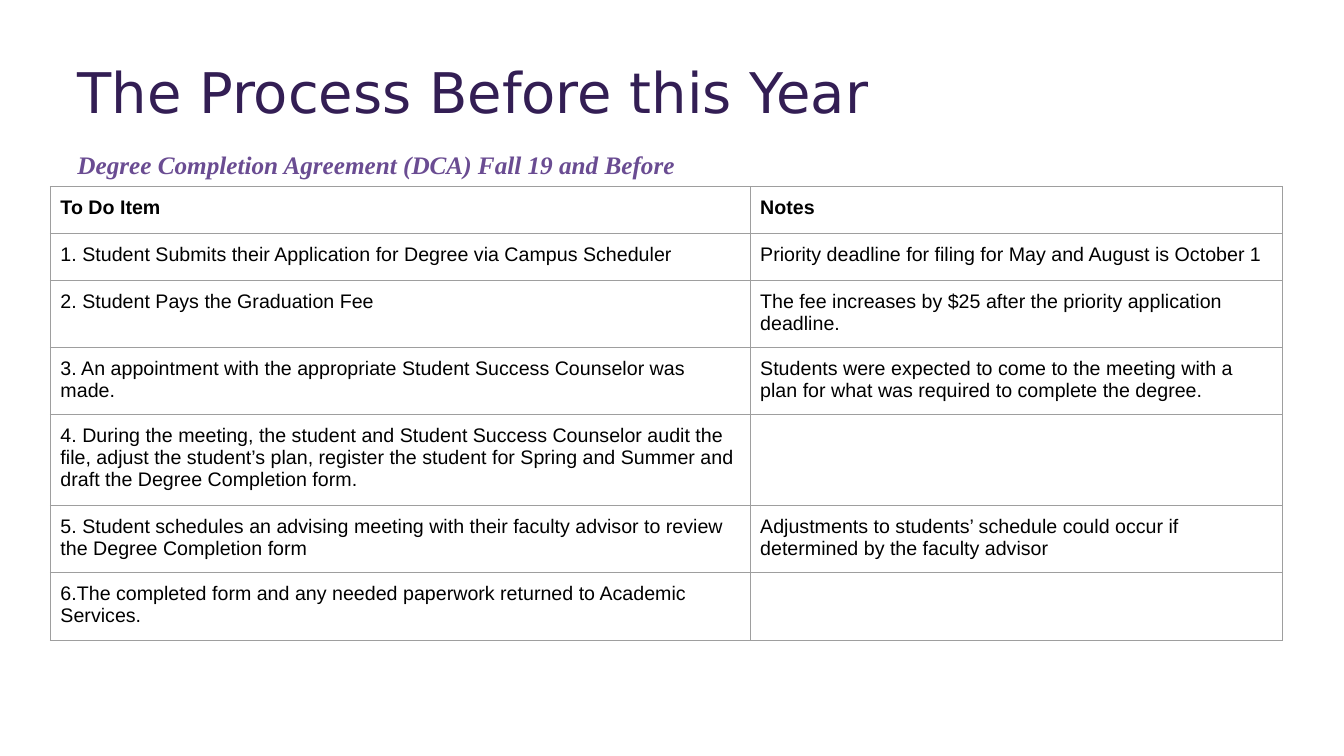
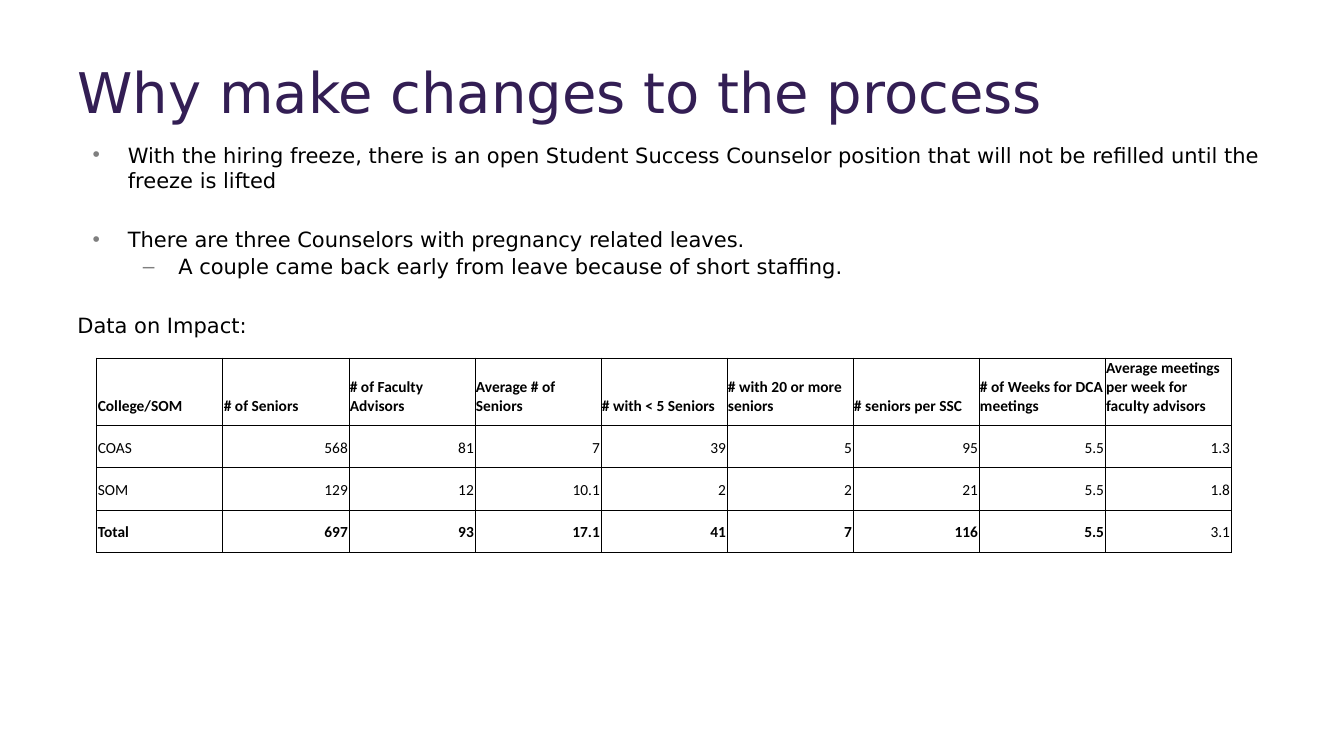
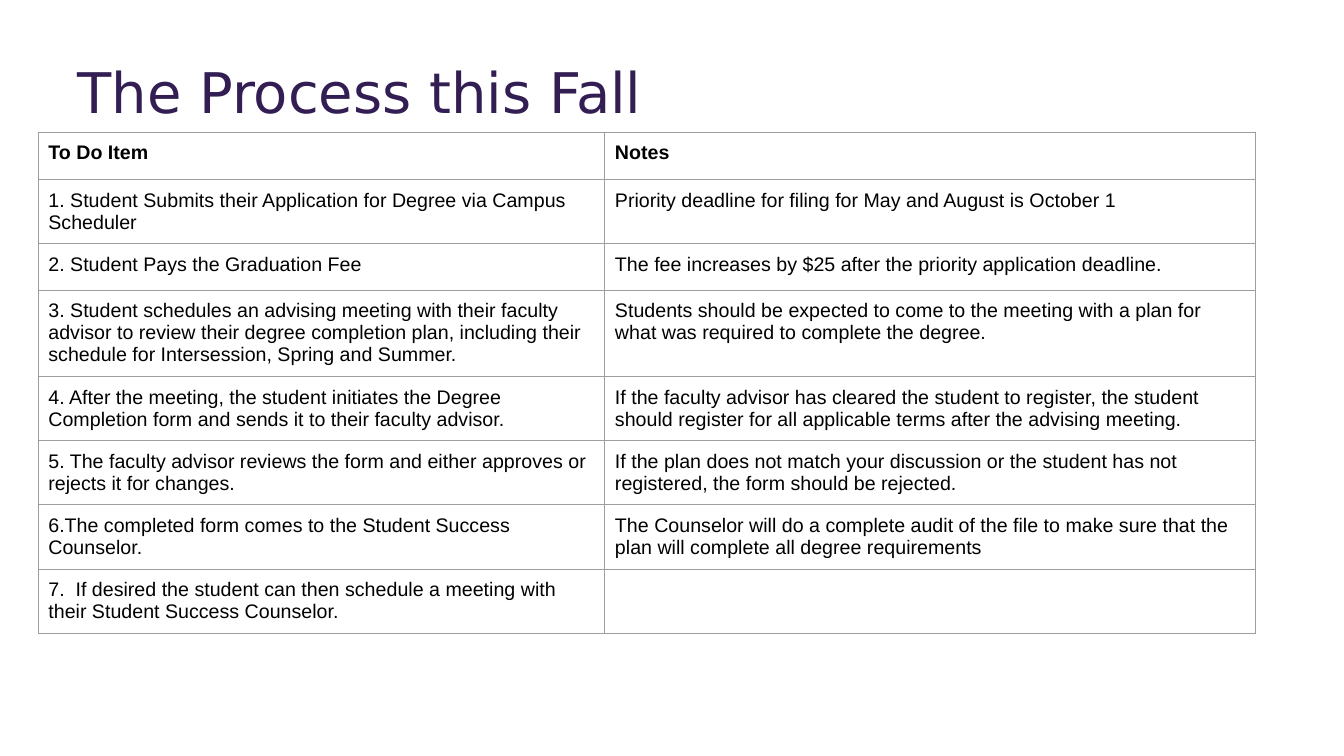
"""Build three slides on the degree completion process."""

from dataclasses import dataclass

import lxml.etree
import pptx
import pptx.dml.color
import pptx.enum.text
import pptx.oxml.ns
import pptx.presentation
import pptx.slide
import pptx.table
import pptx.text.text
import pptx.util


@dataclass(frozen=True)
class TextStyle:
    font: str
    size: float
    color: str
    bold: bool = False
    italic: bool = False


@dataclass(frozen=True)
class Theme:
    background: str = "FFFFFF"
    bullet: str = "7F7F7F"
    title: TextStyle = TextStyle("DejaVu Sans", 40, "331E54")
    subtitle: TextStyle = TextStyle("Times New Roman", 18, "6A4C92", True, True)
    body: TextStyle = TextStyle("DejaVu Sans", 15, "000000")
    step: TextStyle = TextStyle("Arial", 14, "000000")
    step_header: TextStyle = TextStyle("Arial", 14, "000000", True)
    data: TextStyle = TextStyle("Calibri", 11, "000000")
    data_bold: TextStyle = TextStyle("Calibri", 11, "000000", True)


@dataclass(frozen=True)
class CellStyle:
    margins: tuple[float, float, float, float]
    anchor: pptx.enum.text.MSO_ANCHOR
    border_color: str
    border_width: float


@dataclass(frozen=True)
class Box:
    left: float
    top: float
    width: float
    height: float

    def lengths(self) -> tuple[pptx.util.Length, ...]:
        return tuple(pptx.util.Inches(v) for v in (self.left, self.top, self.width, self.height))


@dataclass(frozen=True)
class BodyLine:
    text: str
    bullet: str = ""
    level: int = 0
    space_before: float = 0


THEME = Theme()
ALIGN = pptx.enum.text.PP_ALIGN
ANCHOR = pptx.enum.text.MSO_ANCHOR
STEP_CELL = CellStyle((0.1, 0.1, 0.1, 0.1), ANCHOR.TOP, "9E9E9E", 0.75)
DATA_CELL = CellStyle((0.01, 0.01, 0.01, 0.1), ANCHOR.BOTTOM, "000000", 0.5)
TITLE_BOX = Box(0.67, 0.5, 12, 0.81)
STEP_HEADER_HEIGHT, STEP_ROW_HEIGHT = 0.47, 0.46
DATA_HEADER_HEIGHT, DATA_ROW_HEIGHT = 0.67, 0.42
DATA_COLUMN_WIDTH = 1.25

HEADER = ("To Do Item", "Notes")
APPLY = (
    "1. Student Submits their Application for Degree via Campus Scheduler",
    "Priority deadline for filing for May and August is October 1",
)
PAY = (
    "2. Student Pays the Graduation Fee",
    "The fee increases by $25 after the priority application deadline.",
)
STEPS_BEFORE = [
    HEADER,
    APPLY,
    PAY,
    (
        "3. An appointment with the appropriate Student Success Counselor was made.",
        "Students were expected to come to the meeting with a plan for what was required "
        "to complete the degree.",
    ),
    (
        "4. During the meeting, the student and Student Success Counselor audit the file, "
        "adjust the student’s plan, register the student for Spring and Summer and draft "
        "the Degree Completion form.",
        "",
    ),
    (
        "5. Student schedules an advising meeting with their faculty advisor to review the "
        "Degree Completion form",
        "Adjustments to students’ schedule could occur if determined by the faculty advisor",
    ),
    ("6.The completed form and any needed paperwork returned to Academic Services.", ""),
]
STEPS_THIS_FALL = [
    HEADER,
    APPLY,
    PAY,
    (
        "3. Student schedules an advising meeting with their faculty advisor to review their "
        "degree completion plan, including their schedule for Intersession, Spring and Summer.",
        "Students should be expected to come to the meeting with a plan for what was required "
        "to complete the degree.",
    ),
    (
        "4. After the meeting, the student initiates the Degree Completion form and sends it "
        "to their faculty advisor.",
        "If the faculty advisor has cleared the student to register, the student should "
        "register for all applicable terms after the advising meeting.",
    ),
    (
        "5. The faculty advisor reviews the form and either approves or rejects it for changes.",
        "If the plan does not match your discussion or the student has not registered, the "
        "form should be rejected.",
    ),
    (
        "6.The completed form comes to the Student Success Counselor.",
        "The Counselor will do a complete audit of the file to make sure that the plan will "
        "complete all degree requirements",
    ),
    (
        "7.  If desired the student can then schedule a meeting with their Student Success "
        "Counselor.",
        "",
    ),
]
IMPACT = [
    (
        "College/SOM", "# of Seniors", "# of Faculty Advisors", "Average # of Seniors",
        "# with < 5 Seniors", "# with 20 or more seniors", "# seniors per SSC",
        "# of Weeks for DCA meetings", "Average meetings per week for faculty advisors",
    ),
    ("COAS", "568", "81", "7", "39", "5", "95", "5.5", "1.3"),
    ("SOM", "129", "12", "10.1", "2", "2", "21", "5.5", "1.8"),
    ("Total", "697", "93", "17.1", "41", "7", "116", "5.5", "3.1"),
]
REASONS = [
    BodyLine(
        "With the hiring freeze, there is an open Student Success Counselor position that "
        "will not be refilled until the freeze is lifted",
        "•",
    ),
    BodyLine("There are three Counselors with pregnancy related leaves.", "•", 0, 24.5),
    BodyLine("A couple came back early from leave because of short staffing.", "–", 1, 1),
    BodyLine("Data on Impact:", space_before=24.5),
]


def add_run(p: pptx.text.text._Paragraph, text: str, style: TextStyle) -> None:
    r = p.add_run()
    r.text = text
    r.font.name = style.font
    r.font.size = pptx.util.Pt(style.size)
    r.font.bold = style.bold
    r.font.italic = style.italic
    r.font.color.rgb = pptx.dml.color.RGBColor.from_string(style.color)


def add_element(parent: lxml.etree._Element, tag: str, **attrs: str) -> lxml.etree._Element:
    return lxml.etree.SubElement(parent, pptx.oxml.ns.qn(tag), attrs)


def set_bullet(p: pptx.text.text._Paragraph, line: BodyLine) -> None:
    p.level = line.level
    pPr = p._p.get_or_add_pPr()
    pPr.set("marL", str(pptx.util.Inches(0.5 * (line.level + 1))))
    pPr.set("indent", str(pptx.util.Inches(-0.35)))
    add_element(add_element(pPr, "a:buClr"), "a:srgbClr", val=THEME.bullet)
    add_element(pPr, "a:buFont", typeface="Arial")
    add_element(pPr, "a:buChar", char=line.bullet)


def add_titled_slide(prs: pptx.presentation.Presentation, title: str) -> pptx.slide.Slide:
    s = prs.slides.add_slide(prs.slide_layouts[5])
    s.background.fill.solid()
    s.background.fill.fore_color.rgb = pptx.dml.color.RGBColor.from_string(THEME.background)
    sp = s.shapes.title
    sp.left, sp.top, sp.width, sp.height = TITLE_BOX.lengths()
    tf = sp.text_frame
    tf.auto_size = pptx.enum.text.MSO_AUTO_SIZE.NONE
    tf.vertical_anchor = ANCHOR.MIDDLE
    p = tf.paragraphs[0]
    p.alignment = ALIGN.LEFT
    add_run(p, title, THEME.title)
    return s


def add_body(s: pptx.slide.Slide, box: Box, lines: list[BodyLine], style: TextStyle) -> None:
    tf = s.shapes.add_textbox(*box.lengths()).text_frame
    tf.word_wrap = True
    for i, line in enumerate(lines):
        p = tf.add_paragraph() if i else tf.paragraphs[0]
        if line.space_before:
            p.space_before = pptx.util.Pt(line.space_before)
        if line.bullet:
            set_bullet(p, line)
        add_run(p, line.text, style)


def format_cell(cell: pptx.table._Cell, style: CellStyle) -> None:
    margins = [pptx.util.Inches(m) for m in style.margins]
    cell.margin_left, cell.margin_top, cell.margin_right, cell.margin_bottom = margins
    cell.vertical_anchor = style.anchor
    cell.fill.background()
    tcPr = cell._tc.get_or_add_tcPr()
    for i, side in enumerate(("a:lnL", "a:lnR", "a:lnT", "a:lnB")):
        ln = add_element(tcPr, side, w=str(pptx.util.Pt(style.border_width)))
        add_element(add_element(ln, "a:solidFill"), "a:srgbClr", val=style.border_color)
        tcPr.insert(i, ln)


def add_grid(
    s: pptx.slide.Slide,
    left: float,
    top: float,
    widths: list[float],
    heights: list[float],
    style: CellStyle,
) -> pptx.table.Table:
    box = Box(left, top, sum(widths), sum(heights))
    table = s.shapes.add_table(len(heights), len(widths), *box.lengths()).table
    table.first_row = table.horz_banding = False
    for column, width in zip(table.columns, widths):
        column.width = pptx.util.Inches(width)
    for row, height in zip(table.rows, heights):
        row.height = pptx.util.Inches(height)
    for cell in table.iter_cells():
        format_cell(cell, style)
    return table


def add_steps(
    s: pptx.slide.Slide, left: float, top: float, widths: list[float], steps: list[tuple[str, str]]
) -> None:
    heights = [STEP_HEADER_HEIGHT] + [STEP_ROW_HEIGHT] * (len(steps) - 1)
    table = add_grid(s, left, top, widths, heights, STEP_CELL)
    for row, step in enumerate(steps):
        for col, text in enumerate(step):
            if text:
                p = table.cell(row, col).text_frame.paragraphs[0]
                add_run(p, text, THEME.step if row else THEME.step_header)


def add_impact(s: pptx.slide.Slide, left: float, top: float) -> None:
    last_row, last_col = len(IMPACT) - 1, len(IMPACT[0]) - 1
    widths = [DATA_COLUMN_WIDTH] * len(IMPACT[0])
    heights = [DATA_HEADER_HEIGHT] + [DATA_ROW_HEIGHT] * last_row
    table = add_grid(s, left, top, widths, heights, DATA_CELL)
    for row, values in enumerate(IMPACT):
        for col, text in enumerate(values):
            p = table.cell(row, col).text_frame.paragraphs[0]
            if row and col:
                p.alignment = ALIGN.RIGHT
                p.line_spacing = 1.15
            bold = row == 0 or (row == last_row and col != last_col)
            add_run(p, text, THEME.data_bold if bold else THEME.data)


def main() -> None:
    prs = pptx.Presentation()
    prs.slide_width = pptx.util.Inches(13.33)
    prs.slide_height = pptx.util.Inches(7.5)

    s = add_titled_slide(prs, "The Process Before this Year")
    subtitle = BodyLine("Degree Completion Agreement (DCA) Fall 19 and Before")
    add_body(s, Box(0.67, 1.43, 12, 0.72), [subtitle], THEME.subtitle)
    add_steps(s, 0.5, 1.85, [6.94, 5.28], STEPS_BEFORE)

    s = add_titled_slide(prs, "Why make changes to the process")
    add_body(s, Box(0.67, 1.36, 12, 4.05), REASONS, THEME.body)
    add_impact(s, 0.96, 3.55)

    s = add_titled_slide(prs, "The Process this Fall")
    add_steps(s, 0.38, 1.31, [5.62, 6.45], STEPS_THIS_FALL)

    prs.save("out.pptx")


if __name__ == "__main__":
    main()
